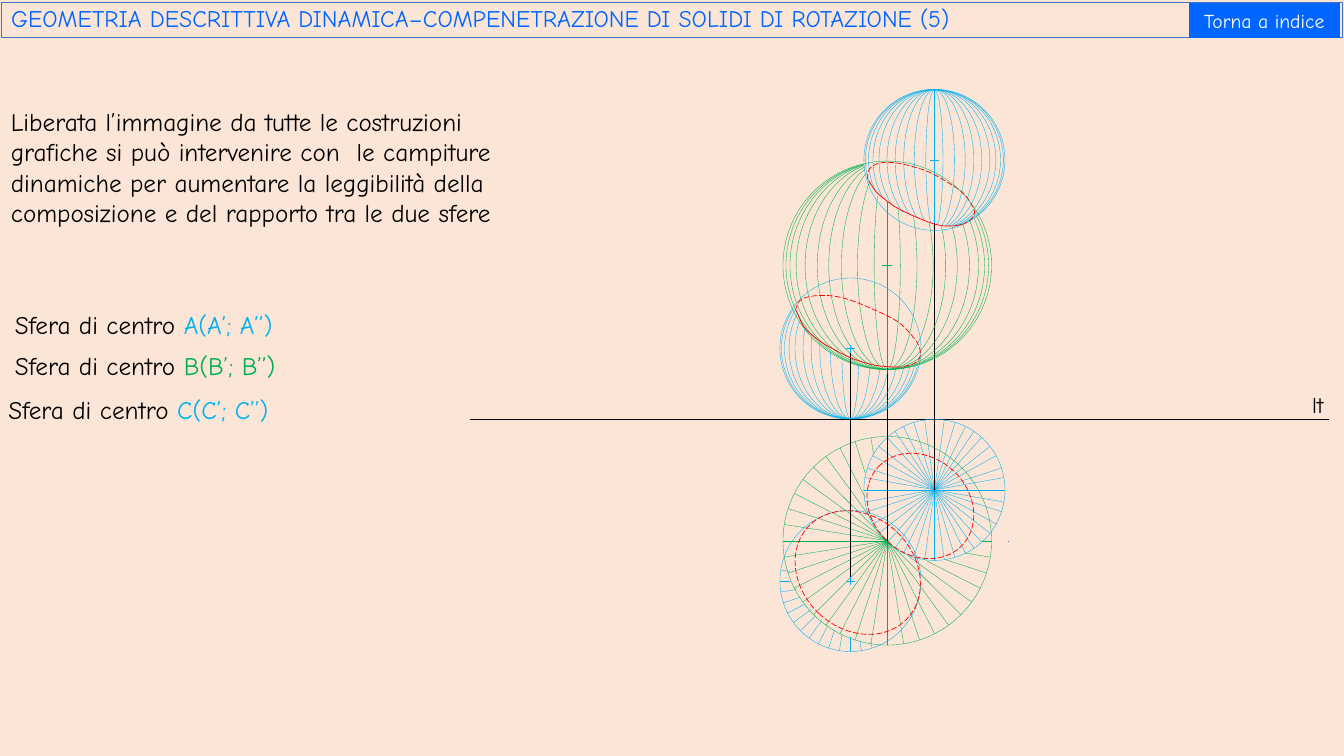
import math

import pptx
import pptx.dml.color
import pptx.enum.dml
import pptx.enum.shapes
import pptx.enum.text
import pptx.oxml
import pptx.oxml.ns
import pptx.util

Pt = pptx.util.Pt
SHAPES = pptx.enum.shapes.MSO_SHAPE
ALIGN = pptx.enum.text.PP_ALIGN
FONT = "Comic Neue"
COLOURS = {"background": "FBE5D6", "frame": "4472C4", "accent": "0066FF", "black": "000000",
           "white": "FFFFFF", "blue": "00B0F0", "green": "00B050", "red": "FF0000"}
STEP = 9  # degrees between neighbouring radii
TILTS = [8, 17, 26, 34, 42, 52, 61, 72, 80]  # diameters of sphere A, degrees from the vertical

SMALL_WIDTHS = [12.2, 28.8, 43.9, 56.2, 67.7, 79.2, 87.8, 94.3, 98.6]
LARGE_WIDTHS = [18.7, 42.5, 65.5, 83.5, 100, 117.4, 130.3, 139, 144.7]

# Centres are measured from the drawing's corner; each meridian has a start and end adjustment.
# Radii map an angle (clockwise from the right) to the distance where the visible part begins;
# a negative distance runs through the centre and makes a full diameter.
SPHERES = {
    "A": {
        "colour": "blue", "radius": 50.4, "x": 331.5, "elevation": 54.2, "plan": 289.9,
        "cross": 2.9, "axis": (-50.4, 45.4), "widths": SMALL_WIDTHS,
        "starts": [55.96, 59.53, 63.89, 67.93, 72.55, 80.05, 86.07, 90.15, 95.07],
        "ends": [52.35, 50.48, 48.75, 47.6, 46.98, 44.8, 43.96, 43.4, 38.53],
        "radii": {270 + side * tilt: -50.4 for tilt in [0, *TILTS, 90] for side in (1, -1)
                  if side == 1 or tilt in TILTS},
    },
    "B": {
        "colour": "green", "radius": 74.5, "x": 297.8, "elevation": 129.6, "plan": 326.3,
        "cross": 3.6, "axis": (-45, 73), "widths": LARGE_WIDTHS,
        "starts": [168.85, 179.01, 188.42, 194.17, 197.61, 198.72, 199.04, 199.07, 198.67],
        "ends": [157.22, 154.54] + [154.07] * 7,
        "radii": {**{angle: 0 for angle in range(45, 226, STEP)},
                  0: 68, 9: 56, 18: 44, 27: 31, 36: 18.7, 234: 17, 243: 35, 252: 51, 261: 63},
    },
    "C": {
        "colour": "blue", "radius": 50.4, "x": 271.5, "elevation": 189, "plan": 355,
        "cross": 2.9, "axis": None, "widths": SMALL_WIDTHS,
        "starts": [36.88, 25.94, 21.24, 17.2, 13.53, 11.7, 9.94, 8.73, 8.73],
        "ends": [82.51, 104.47, 115.17, 120.37, 122.72, 124.81, 127.56, 128.54, 128.54],
        "radii": {72: 46, 81: 43, 90: 40, 99: 38.5, 108: 36.7, 117: 36, 126: 35, 135: 36,
                  144: 35, 153: 36, 162: 38, 171: 39, 180: 43, 189: 44},
    },
}

# Intersection curves in elevation, measured from the centre of the small sphere
HIDDEN_CURVES = {
    "A": [(-47.6, 14), (-47.6, 9.6), (-46.1, 6), (-43.3, 3.9), (-39.7, 2.4), (-33.2, 1.7),
          (-21.7, 3.2), (-5.1, 8.2), (7.1, 14.7), (20.1, 23.3), (26.6, 32), (28.7, 37.7),
          (25.9, 42.8), (21.5, 45.6)],
    "C": [(-39.4, -27.2), (-35.1, -35.2), (-21.4, -38), (-4.1, -35.9), (18.2, -27.2),
          (35.5, -17.9), (47.7, -4.2), (49.9, 5.2), (46.3, 10.2), (37.6, 13.1)],
}
VISIBLE_CURVES = {
    "A": [(-46.9, 14.7), (-41.8, 22.6), (-32.5, 30.5), (-24.5, 35.6), (-13.7, 40.6), (-2.9, 44.9),
          (5.7, 47.1), (14.3, 47.1), (21.5, 45.6)],
    "C": [(-38.7, -27.2), (-32.9, -15), (-22.1, -5.6), (-12.8, 0.1), (0.2, 6.6), (13.1, 10.9),
          (21.1, 12.4), (29, 13.1), (36.9, 13.1)],
}
# Intersection ellipses in plan: centre, width, height, rotation
PLAN_ELLIPSES = [(321.4, 301.4, 82, 69, 42.8), (276.7, 349, 80.6, 96.5, 312.8)]


def rgb(name):
    return pptx.dml.color.RGBColor.from_string(COLOURS[name])


def style_outline(outlined, colour, width=0.25, dashed=False):
    outlined.line.color.rgb = rgb(colour)
    outlined.line.width = Pt(width)
    if dashed:
        outlined.line.dash_style = pptx.enum.dml.MSO_LINE.LONG_DASH


def style_run(run, size, colour):
    run.font.name = FONT
    run.font.size = Pt(size)
    run.font.color.rgb = rgb(colour)


def draw_line(slide, x1, y1, x2, y2, colour, weight=0.25):
    segment = slide.shapes.add_connector(
        pptx.enum.shapes.MSO_CONNECTOR.STRAIGHT, Pt(x1), Pt(y1), Pt(x2), Pt(y2))
    style_outline(segment, colour, weight)
    segment._element.spPr.append(pptx.oxml.parse_xml(
        '<a:effectLst xmlns:a="http://schemas.openxmlformats.org/drawingml/2006/main"/>'))


def draw_round(slide, kind, x, y, width, height, colour, weight=0.25, dashed=False):
    """Place an unfilled ellipse or arc around its centre."""
    outline = slide.shapes.add_shape(
        kind, Pt(x - width / 2), Pt(y - height / 2), Pt(width), Pt(height))
    outline.shadow.inherit = False
    outline.fill.background()
    style_outline(outline, colour, weight, dashed)
    return outline


def draw_cross(slide, x, y, arm, colour):
    draw_line(slide, x - arm, y, x + arm, y, colour)
    draw_line(slide, x, y - arm, x, y + arm, colour)


def bend_segments(curve):
    """Turn the straight segments of a freeform into smooth cubic ones."""
    qn = pptx.oxml.ns.qn
    points = [(int(pt.get("x")), int(pt.get("y"))) for pt in curve._element.iter(qn("a:pt"))]
    padded = [points[0], *points, points[-1]]
    for i, segment in enumerate(list(curve._element.iter(qn("a:lnTo")))):
        before, start, end, after = padded[i:i + 4]
        controls = ([s + (e - b) / 6 for b, s, e in zip(before, start, end)],
                    [e - (a - s) / 6 for s, e, a in zip(start, end, after)])
        segment.tag = qn("a:cubicBezTo")
        for place, (x, y) in enumerate(controls):
            control = segment.makeelement(qn("a:pt"), {"x": str(round(x)), "y": str(round(y))})
            segment.insert(place, control)


def draw_curve(slide, x, y, anchors, dashed):
    points = [(Pt(x + dx), Pt(y + dy)) for dx, dy in anchors]
    builder = slide.shapes.build_freeform(*points[0])
    builder.add_line_segments(points[1:], close=False)
    curve = builder.convert_to_shape()
    bend_segments(curve)
    curve.shadow.inherit = False
    curve.fill.background()
    style_outline(curve, "red", 0.5, dashed)


def draw_elevation(slide, x, y, sphere):
    colour, diameter = sphere["colour"], 2 * sphere["radius"]
    draw_round(slide, SHAPES.OVAL, x, y, diameter, diameter, colour)
    for width, start, end in zip(sphere["widths"], sphere["starts"], sphere["ends"]):
        meridian = draw_round(slide, SHAPES.ARC, x, y, width, diameter - 0.5, colour)
        meridian.adjustments[0] = start
        meridian.adjustments[1] = end
    draw_cross(slide, x, y, sphere["cross"], colour)
    if sphere["axis"]:
        top, bottom = sphere["axis"]
        draw_line(slide, x, y + top, x, y + bottom, colour)


def draw_plan(slide, x, y, sphere):
    colour, radius = sphere["colour"], sphere["radius"]
    draw_round(slide, SHAPES.OVAL, x, y, 2 * radius, 2 * radius, colour)
    for angle, inner in sphere["radii"].items():
        dx, dy = math.cos(math.radians(angle)), math.sin(math.radians(angle))
        draw_line(slide, x + inner * dx, y + inner * dy, x + radius * dx, y + radius * dy, colour)


def add_drawing(slide, left, top, width):
    ground = top + 239.5
    draw_line(slide, left, ground, left + width, ground, "black")
    add_text(slide, left + 594.2, ground - 23.7, 30.2, 26.6, [("lt", "black")], 16)
    for name, sphere in SPHERES.items():
        x, elevation, plan = left + sphere["x"], top + sphere["elevation"], top + sphere["plan"]
        draw_plan(slide, x, plan, sphere)
        draw_line(slide, x, elevation, x, plan, "black")
        draw_elevation(slide, x, elevation, sphere)
        if name in HIDDEN_CURVES:
            draw_curve(slide, x, elevation, HIDDEN_CURVES[name], True)
            draw_curve(slide, x, elevation, VISIBLE_CURVES[name], False)
    sphere_c = SPHERES["C"]
    draw_cross(slide, left + sphere_c["x"], top + sphere_c["plan"], sphere_c["cross"], "blue")
    for x, y, across, high, turn in PLAN_ELLIPSES:
        section = draw_round(slide, SHAPES.OVAL, left + x, top + y, across, high, "red", 0.5, True)
        section.rotation = turn
    # Small mark beside the plan
    draw_line(slide, left + 384.3, top + 326.5, left + 384.4, top + 326.5, "frame", 0.5)


def add_text(slide, left, top, width, height, parts, size=18):
    frame = slide.shapes.add_textbox(Pt(left), Pt(top), Pt(width), Pt(height)).text_frame
    frame.word_wrap = True
    for words, colour in parts:
        run = frame.paragraphs[0].add_run()
        run.text = words
        style_run(run, size, colour)


def add_header(slide, left, top, width, height):
    heading = slide.shapes.title
    heading.left, heading.top, heading.width, heading.height = map(Pt, (left, top, width, height))
    style_outline(heading, "frame", 0.75)
    back = slide.shapes.add_shape(SHAPES.ACTION_BUTTON_CUSTOM, Pt(left + width - 110),
                                  Pt(top + 0.3), Pt(108), Pt(height))
    back.shadow.inherit = False
    back.fill.solid()
    back.fill.fore_color.rgb = rgb("accent")
    back.line.fill.background()
    for part, words, size, colour, align in (
            (heading, "GEOMETRIA DESCRITTIVA DINAMICA–COMPENETRAZIONE DI SOLIDI DI ROTAZIONE (5)",
             17, "accent", ALIGN.LEFT),
            (back, "Torna a indice", 14, "white", ALIGN.CENTER)):
        frame = part.text_frame
        frame.text = words
        frame.word_wrap = True
        frame.auto_size = pptx.enum.text.MSO_AUTO_SIZE.NONE
        frame.vertical_anchor = pptx.enum.text.MSO_ANCHOR.MIDDLE
        frame.paragraphs[0].alignment = align
        style_run(frame.paragraphs[0].runs[0], size, colour)
    heading.text_frame.paragraphs[0].line_spacing = 0.8


def add_explanation(slide, left, top, width):
    add_text(slide, left, top, width, 94.3, [(
        "Liberata l’immagine da tutte le costruzioni grafiche si può intervenire con  le campiture "
        "dinamiche per aumentare la leggibilità della composizione e del rapporto tra le due sfere",
        "black")])
    for name, dx, dy in (("A", 2.9, 144.9), ("B", 2.9, 174.2), ("C", -1.8, 205.6)):
        add_text(slide, left + dx, top + dy, 291.6, 30.2, [
            ("Sfera di centro ", "black"), (f"{name}({name}’; {name}’’)", SPHERES[name]["colour"])])


def main():
    deck = pptx.Presentation()
    deck.slide_width, deck.slide_height = Pt(960), Pt(540)
    slide = deck.slides.add_slide(deck.slide_layouts[5])
    slide.background.fill.solid()
    slide.background.fill.fore_color.rgb = rgb("background")
    add_header(slide, 0.8, 1.8, 958.3, 25.2)
    add_explanation(slide, 0.7, 72.5, 388)
    add_drawing(slide, 336, 60, 613)
    deck.save("out.pptx")


if __name__ == "__main__":
    main()
